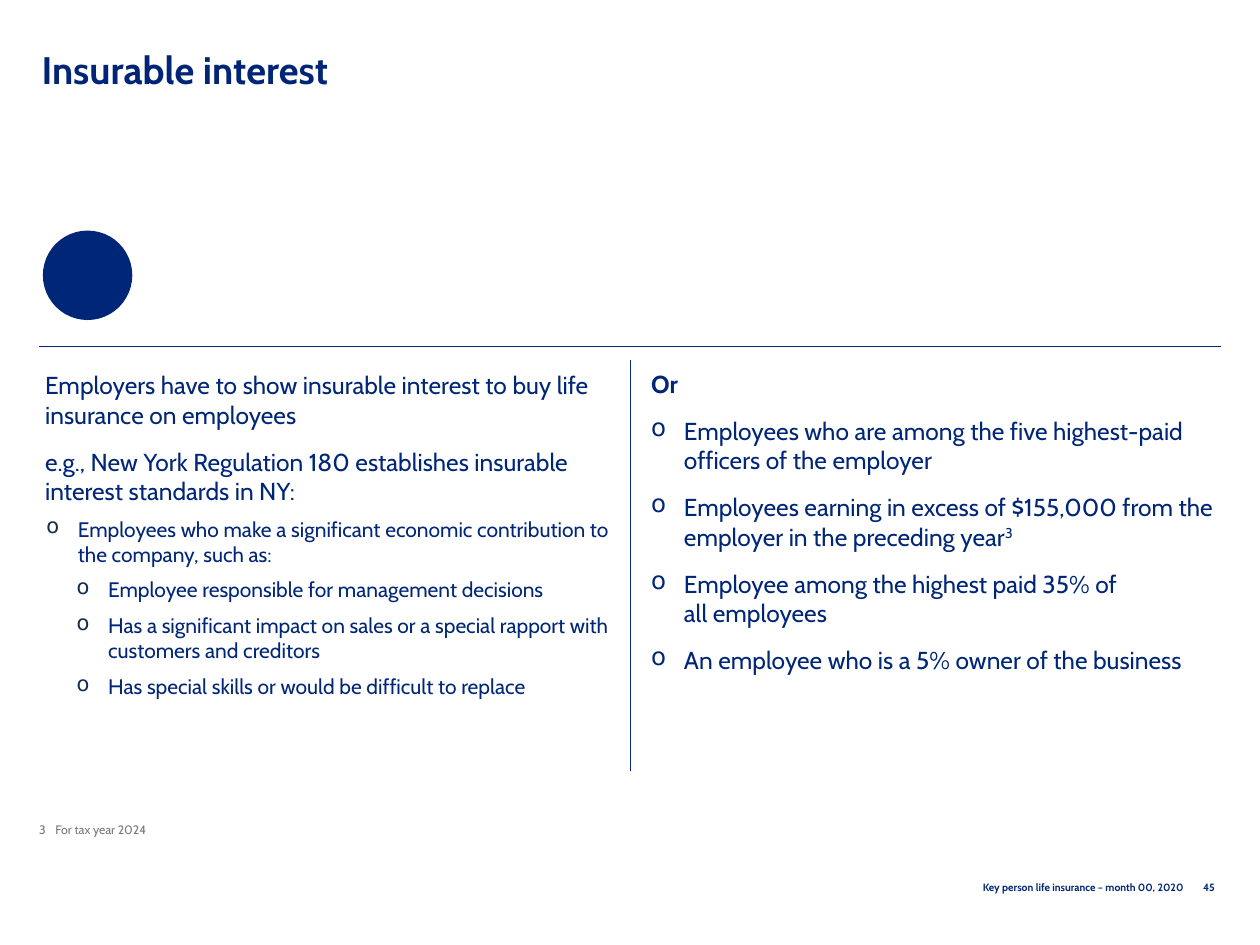
from lxml.etree import SubElement
from pptx import Presentation
from pptx.dml.color import RGBColor
from pptx.enum.shapes import MSO_CONNECTOR as CONNECTOR, MSO_SHAPE as SHAPE
from pptx.enum.text import MSO_ANCHOR as ANCHOR, MSO_AUTO_SIZE as AUTO_SIZE, PP_ALIGN as ALIGN
from pptx.oxml.ns import qn
from pptx.util import Inches, Pt

COLORS = {"navy": "002677", "title": "002577", "bullet": "162B48", "gray": "75787B"}


def write(frame, text, size=14, bold=False, color="navy", align=ALIGN.LEFT, before=0,
          spacing=None, left=0, hang=0, bullet=None, superscript=None):
    first = frame.paragraphs[0]
    para = first if not first.runs else frame.add_paragraph()
    para.text = text
    para.alignment = align
    para.space_before = Pt(before)
    if spacing:
        para.line_spacing = Pt(spacing)
    properties = para._p.get_or_add_pPr()
    properties.set("marL", str(Inches(left)))
    properties.set("indent", str(Inches(-hang)))
    if bullet:
        bullet_color = SubElement(properties, qn("a:buClr"))
        SubElement(bullet_color, qn("a:srgbClr"), val=COLORS[bullet])
        SubElement(properties, qn("a:buChar"), char="o")
    else:
        SubElement(properties, qn("a:buNone"))
    if superscript:
        raised = para.add_run()
        raised.text = superscript
        raised.font._element.set("baseline", "30000")
    for span in para.runs:
        span.font.name = "Cabin"
        span.font.size = Pt(size)
        span.font.bold = bold
        span.font.color.rgb = RGBColor.from_string(COLORS[color])


def add_box(left, top, width, height, anchor=ANCHOR.TOP):
    box = page.shapes.add_textbox(Inches(left), Inches(top), Inches(width), Inches(height))
    box.text_frame.word_wrap = True
    box.text_frame.vertical_anchor = anchor
    return box.text_frame


deck = Presentation()
deck.slide_width, deck.slide_height = Inches(10), Inches(7.5)
page = deck.slides.add_slide(deck.slide_layouts[5])

title = page.shapes.title
title.left, title.top = Inches(0.23), Inches(0.42)
title.width, title.height = Inches(9.45), Inches(0.82)
title.text_frame.vertical_anchor = ANCHOR.TOP
title.text_frame.auto_size = AUTO_SIZE.NONE
write(title.text_frame, "Insurable interest", size=21.9, bold=True, color="title", spacing=18.8)

number = add_box(9.4, 6.94, 0.34, 0.15)
write(number, "45", size=6, bold=True, color="title", align=ALIGN.RIGHT)
footer = add_box(6.11, 6.94, 3.38, 0.2, ANCHOR.MIDDLE)
write(footer, "Key person life insurance – month 00, 2020", size=6, bold=True, align=ALIGN.RIGHT)

for x1, y1, x2, y2 in [(0.31, 2.75, 9.69, 2.75), (5, 2.86, 5, 6.12)]:
    rule = page.shapes.add_connector(CONNECTOR.STRAIGHT, Inches(x1), Inches(y1), Inches(x2), Inches(y2))
    rule.line.color.rgb = RGBColor.from_string(COLORS["navy"])
    rule.line.width = Pt(0.5)
    SubElement(rule._element.spPr, qn("a:effectLst"))

interest = add_box(0.26, 2.89, 4.69, 3.11)
write(interest, "Employers have to show insurable interest to buy life insurance on employees")
write(interest, "e.g., New York Regulation 180 establishes insurable interest standards in NY:", before=10)
for left, text in [
    (0.26, "Employees who make a significant economic contribution to the company, such as:"),
    (0.5, "Employee responsible for management decisions"),
    (0.5, "Has a significant impact on sales or a special rapport with customers and creditors"),
    (0.5, "Has special skills or would be difficult to replace"),
]:
    write(interest, text, size=12, before=6, left=left, hang=0.25, bullet="bullet")

alternatives = add_box(5.07, 2.88, 4.68, 3.12)
write(alternatives, "Or", bold=True)
for text, note in [
    ("Employees who are among the five highest-paid officers of the employer", None),
    ("Employees earning in excess of $155,000 from the employer in the preceding year", "3"),
    ("Employee among the highest paid 35% of\vall employees", None),
    ("An employee who is a 5% owner of the business", None),
]:
    write(alternatives, text, before=10, left=0.26, hang=0.26, bullet="navy", superscript=note)

circle = page.shapes.add_shape(SHAPE.OVAL, Inches(0.34), Inches(1.83), Inches(0.71), Inches(0.71))
circle.shadow.inherit = False
circle.fill.solid()
circle.fill.fore_color.rgb = RGBColor.from_string(COLORS["navy"])
circle.line.fill.background()

footnote = add_box(0.31, 6.52, 4.69, 0.12, ANCHOR.BOTTOM)
footnote.margin_left = footnote.margin_right = footnote.margin_top = footnote.margin_bottom = 0
footnote.auto_size = AUTO_SIZE.SHAPE_TO_FIT_TEXT
write(footnote, "3\tFor tax year 2024", size=7, color="gray", left=0.13, hang=0.13)

deck.save("out.pptx")
